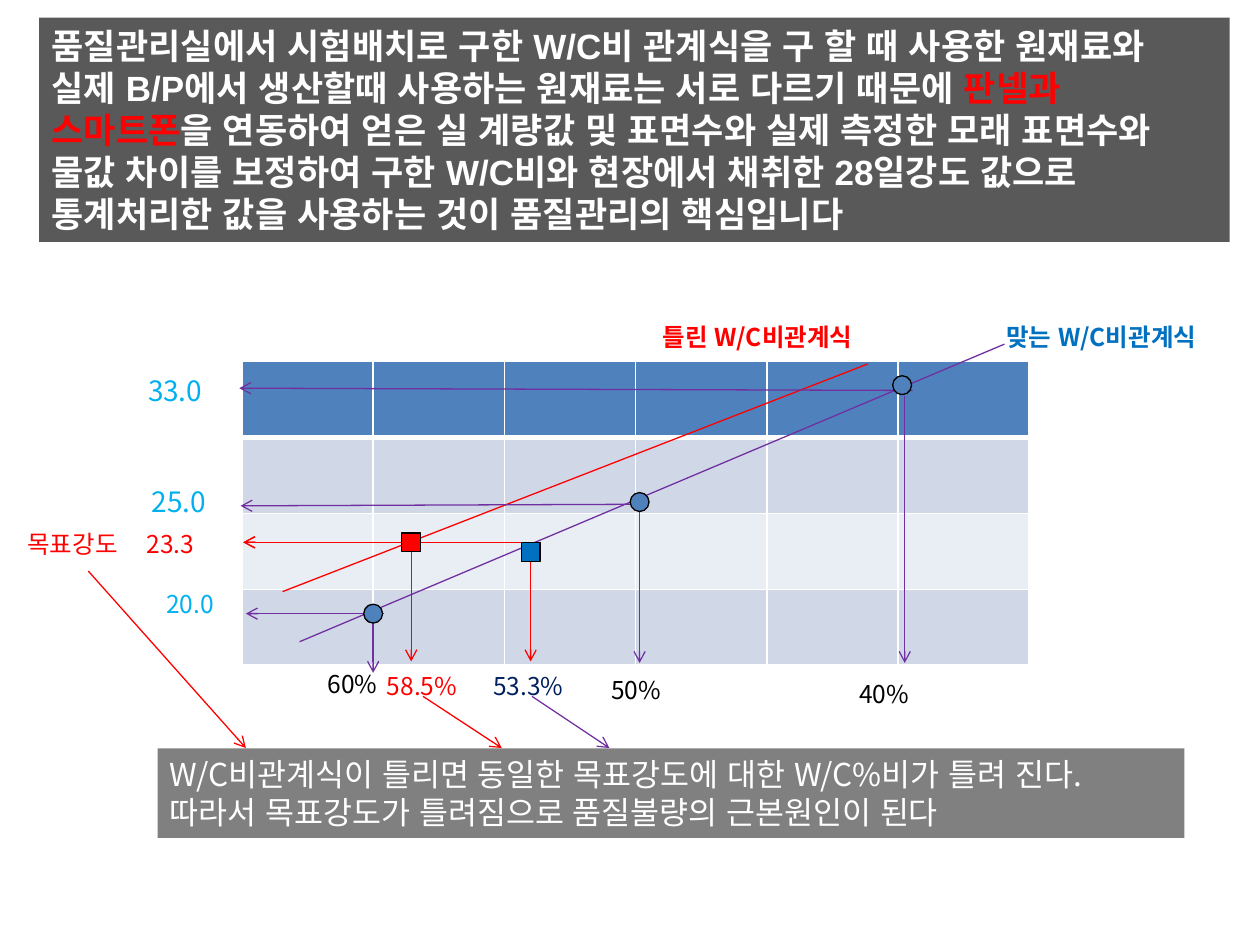
from pptx import Presentation
from pptx.dml.color import RGBColor
from pptx.enum.shapes import MSO_CONNECTOR, MSO_SHAPE
from pptx.enum.text import MSO_ANCHOR, PP_ALIGN
from pptx.oxml.ns import qn
from pptx.util import Inches, Pt
from lxml import etree

WHITE = RGBColor(0xFF, 0xFF, 0xFF)
BLACK = RGBColor(0, 0, 0)
RED = RGBColor(0xFF, 0, 0)
BLUE = RGBColor(0, 0x70, 0xC0)
NAVY = RGBColor(0, 0x20, 0x60)
SKY = RGBColor(0, 0xB0, 0xF0)
PURPLE = RGBColor(0x70, 0x30, 0xA0)
STEEL = RGBColor(0x4F, 0x81, 0xBD)
PALE = RGBColor(0xD0, 0xD8, 0xE8)
MIST = RGBColor(0xE9, 0xED, 0xF4)
DARK = RGBColor(0x59, 0x59, 0x59)
GRAY = RGBColor(0x80, 0x80, 0x80)
SANS = "Noto Sans CJK KR"
COLS, ROWS = 6, 4


def write(frame, lines, size=14, font=SANS, color=BLACK, bold=False,
          wrap=True, anchor=MSO_ANCHOR.TOP, pitch=None):
    """Each line is a string or a list of (text, color) runs."""
    frame.word_wrap = wrap
    frame.vertical_anchor = anchor
    for i, line in enumerate(lines):
        para = frame.paragraphs[0] if i == 0 else frame.add_paragraph()
        para.alignment = PP_ALIGN.LEFT
        if pitch:
            para.line_spacing = Pt(pitch)
        for text, tint in [(line, color)] if isinstance(line, str) else line:
            run = para.add_run()
            run.text = text
            run.font.name = font
            run.font.size = Pt(size)
            run.font.bold = bold
            run.font.color.rgb = tint
            etree.SubElement(run.font._element, qn("a:ea"), typeface="Arial")


def block(slide, kind, box, fill, edge=None):
    shape = slide.shapes.add_shape(kind, *map(Inches, box))
    shape.shadow.inherit = False
    shape.fill.solid()
    shape.fill.fore_color.rgb = fill
    if edge is None:
        shape.line.fill.background()
    else:
        shape.line.color.rgb = edge
        shape.line.width = Pt(0.75)
    return shape


def panel(slide, box, fill, lines, **style):
    shape = block(slide, MSO_SHAPE.RECTANGLE, box, fill)
    write(shape.text_frame, lines, color=WHITE, anchor=MSO_ANCHOR.MIDDLE, **style)


def stroke(slide, start, end, color, arrow=True):
    line = slide.shapes.add_connector(
        MSO_CONNECTOR.STRAIGHT, *map(Inches, (*start, *end)))
    line.line.color.rgb = color
    line.line.width = Pt(0.75)
    if arrow:
        etree.SubElement(line.line._get_or_add_ln(), qn("a:tailEnd"), type="arrow")
    etree.SubElement(line._element.spPr, qn("a:effectLst"))


def border(cell, thick):
    props = cell._tc.get_or_add_tcPr()
    for i, side in enumerate(("lnL", "lnR", "lnT", "lnB")):
        width = Pt(3 if side == thick else 1)
        edge = etree.Element(qn("a:" + side), w=str(int(width)))
        fill = etree.SubElement(edge, qn("a:solidFill"))
        etree.SubElement(fill, qn("a:srgbClr"), val=str(WHITE))
        props.insert(i, edge)


def grid(slide, box):
    table = slide.shapes.add_table(ROWS, COLS, *map(Inches, box)).table
    for r, fill in enumerate((STEEL, PALE, MIST, PALE)):
        for cell in table.rows[r].cells:
            cell.fill.solid()
            cell.fill.fore_color.rgb = fill
            border(cell, {0: "lnB", 1: "lnT"}.get(r))


def plot(slide, box):
    left, top, width, height = box
    grid(slide, box)

    def at(col, row):
        return left + col * width / COLS, top + row * height / ROWS

    # Trend lines: right and wrong relation
    stroke(slide, at(0.44, 3.69), at(5.81, -0.23), PURPLE, arrow=False)
    stroke(slide, at(0.31, 3.03), at(4.77, 0.03), RED, arrow=False)

    # Arrows to the strength axis: start column, start row, end column, end row
    for col, row, tip, last, color in (
            (1.08, 3.32, 0.03, 3.32, PURPLE), (2.96, 1.88, -0.01, 1.9, PURPLE),
            (5.11, 0.38, -0.02, 0.35, PURPLE), (2.28, 2.38, 0.01, 2.38, RED),
            (1.43, 2.38, 0.01, 2.38, RED)):
        stroke(slide, at(col, row), at(tip, last), color)

    # Arrows down to the ratio axis: column, start row, end row
    for col, row, foot, color in (
            (1, 3.32, 4.1, PURPLE), (3.03, 1.9, 3.97, PURPLE),
            (5.05, 0.45, 3.97, PURPLE), (1.29, 2.51, 3.95, RED),
            (2.2, 2.64, 3.95, RED)):
        stroke(slide, at(col, row), at(col, foot), color)

    # Markers, centred on their points
    side = 0.15
    for col, row, kind, fill in (
            (1, 3.32, MSO_SHAPE.OVAL, STEEL), (3.03, 1.85, MSO_SHAPE.OVAL, STEEL),
            (5.03, 0.31, MSO_SHAPE.OVAL, STEEL),
            (1.29, 2.38, MSO_SHAPE.RECTANGLE, RED),
            (2.2, 2.51, MSO_SHAPE.RECTANGLE, BLUE)):
        x, y = at(col, row)
        block(slide, kind, (x - side / 2, y - side / 2, side, side), fill, BLACK)

    # Labels: text, column, row, width in columns, format
    for text, col, row, span, style in (
            ("33.0", -0.81, 0.07, 0.8, dict(size=16, color=SKY)),
            ("25.0", -0.78, 1.54, 0.8, dict(size=16, color=SKY)),
            ("23.3", -0.82, 2.12, 0.85, dict(color=RED)),
            ("20.0", -0.67, 2.92, 0.65, dict(color=SKY)),
            ("60%", 0.56, 3.97, 0.62, {}),
            ("58.5%", 1.01, 4, 0.75, dict(color=RED)),
            ("53.3%", 1.82, 4, 0.75, dict(color=NAVY)),
            ("50%", 2.72, 4.04, 0.62, {}),
            ("40%", 4.61, 4.1, 0.83, {}),
            ("목표강도", -1.73, 2.12, 0.95, dict(color=RED, wrap=False)),
            ("틀린 W/C비관계식", 3.11, -0.6, 1.79,
             dict(color=RED, bold=True, wrap=False)),
            ("맞는 W/C비관계식", 5.73, -0.6, 1.79,
             dict(color=BLUE, bold=True, wrap=False))):
        x, y = at(col, row)
        spot = slide.shapes.add_textbox(
            *map(Inches, (x, y, span * width / COLS, 0.56 * height / ROWS)))
        write(spot.text_frame, [text], **style)

    # Arrows to the conclusion
    for start, tip, color in (((-1.17, 2.76), 0.03, RED),
                              ((1.38, 4.41), 1.98, RED),
                              ((2.21, 4.41), 2.8, PURPLE)):
        stroke(slide, at(*start), at(tip, 5.09), color)


def main():
    deck = Presentation()
    deck.slide_width, deck.slide_height = Inches(10), Inches(7.5)
    slide = deck.slides.add_slide(deck.slide_layouts[6])

    # Headline
    panel(slide, (0.31, 0.14, 9.45, 1.78), DARK, [[
        ("품질관리실에서 시험배치로 구한 W/C비 관계식을 구 할 때 사용한 원재료와 "
         "실제 B/P에서 생산할때 사용하는 원재료는 서로 다르기 때문에 ", WHITE),
        ("판넬과 스마트폰", RED),
        ("을 연동하여 얻은 실 계량값 및 표면수와 실제 측정한 모래 표면수와 물값 "
         "차이를 보정하여 구한 W/C비와 현장에서 채취한 28일강도 값으로 통계처리한 "
         "값을 사용하는 것이 품질관리의 핵심입니다", WHITE)]],
        size=20, font="Arial", bold=True)

    # Strength against water-cement ratio
    plot(slide, (1.92, 2.87, 6.25, 2.41))

    # Conclusion
    panel(slide, (1.25, 5.94, 8.15, 0.71), GRAY, [
        "W/C비관계식이 틀리면 동일한 목표강도에 대한 W/C%비가 틀려 진다.",
        "따라서 목표강도가 틀려짐으로 품질불량의 근본원인이 된다"],
        size=18, wrap=False, pitch=21.7)

    deck.save("out.pptx")


if __name__ == "__main__":
    main()
